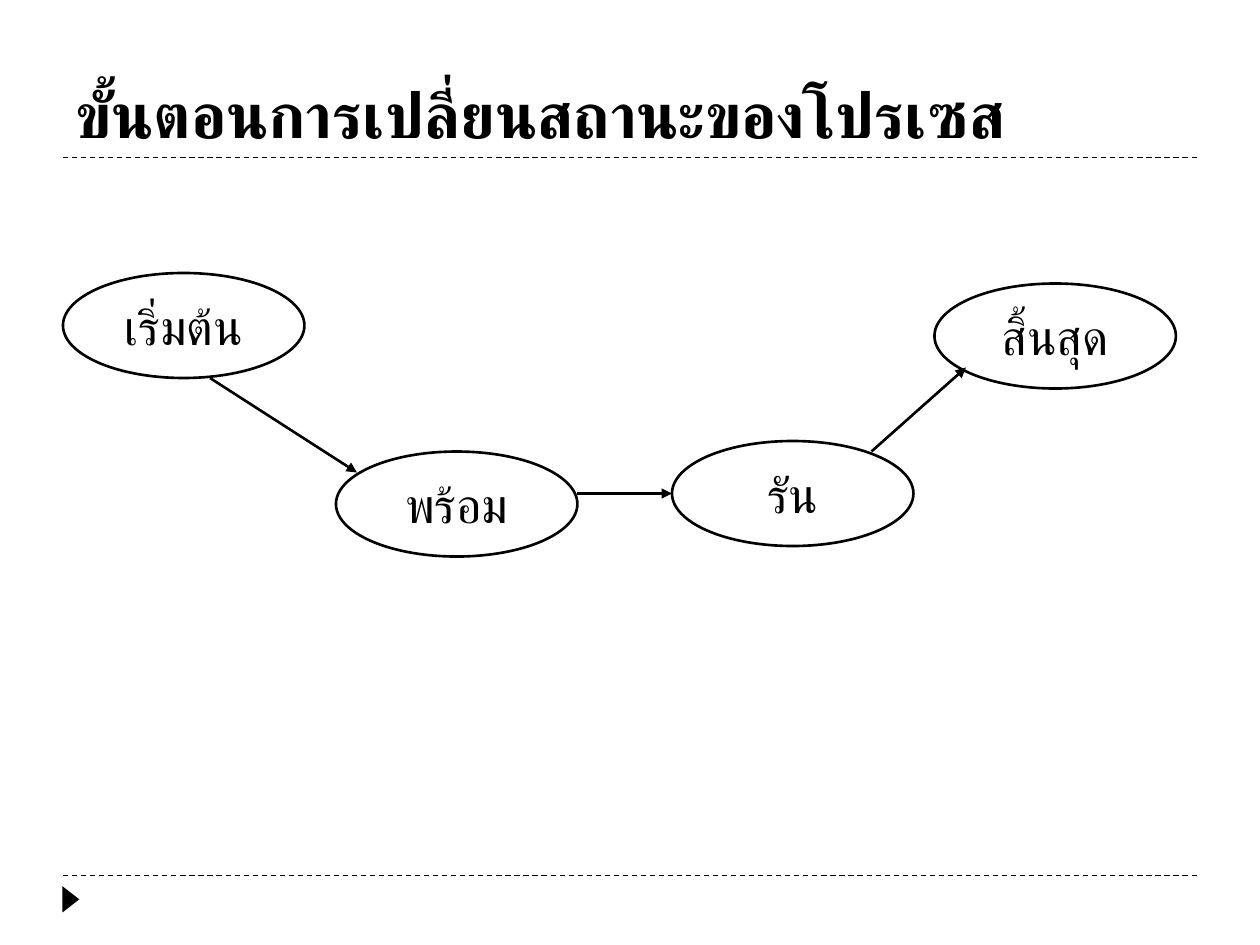
from lxml import etree
from pptx import Presentation
from pptx import util as u
from pptx.dml.color import RGBColor
from pptx.enum import dml, shapes, text
from pptx.oxml.ns import qn

BLACK = RGBColor(0, 0, 0)
WHITE = RGBColor(255, 255, 255)
FONT = "Calibri"

presentation = Presentation()
presentation.slide_width, presentation.slide_height = u.Inches(10), u.Inches(7.5)
slide = presentation.slides.add_slide(presentation.slide_layouts[6])

# Grid of 120 columns by 90 rows
CELL = presentation.slide_width / 120


def write(shape, words, frame_format, alignment, font_format):
    frame = shape.text_frame
    for name, value in frame_format.items():
        setattr(frame, name, value)
    paragraph = frame.paragraphs[0]
    paragraph.alignment = alignment
    run = paragraph.add_run()
    run.text = words
    run.font.color.rgb = BLACK
    for name, value in font_format.items():
        setattr(run.font, name, value)
    # Thai letters take the complex-script font
    etree.SubElement(run.font._element, qn("a:cs"), typeface=FONT)


def connect(start, end, width, dash=None, arrow=False):
    points = [round(value * CELL) for value in start + end]
    connector = slide.shapes.add_connector(shapes.MSO_CONNECTOR.STRAIGHT, *points)
    connector.line.color.rgb = BLACK
    connector.line.width = u.Pt(width)
    if dash:
        connector.line.dash_style = dash
    if arrow:
        etree.SubElement(connector.line._get_or_add_ln(), qn("a:tailEnd"), type="triangle")
    etree.SubElement(connector._element.spPr, qn("a:effectLst"))


# Dashed rules above the footer and under the title
for row in (83.4, 15):
    connect((6, row), (114, row), 0.75, dash=dml.MSO_LINE.DASH)

# Footer marker
marker = slide.shapes.add_shape(
    shapes.MSO_SHAPE.ISOSCELES_TRIANGLE,
    *(round(value * CELL) for value in (5.5, 84.85, 2.5, 1.6)))
marker.rotation = 90
marker.shadow.inherit = False
marker.fill.solid()
marker.fill.fore_color.rgb = BLACK
marker.line.fill.background()

# Title
title = slide.shapes.add_textbox(*(round(value * CELL) for value in (6, 2, 108, 13)))
write(title, "ขั้นตอนการเปลี่ยนสถานะของโปรเซส",
      {"word_wrap": True, "vertical_anchor": text.MSO_ANCHOR.BOTTOM},
      text.PP_ALIGN.LEFT, {"name": FONT, "size": u.Pt(36), "bold": True})

# Process states: column, row, label
states = [(6, 26, "เริ่มต้น"), (64, 42, "รัน"), (32, 43, "พร้อม"), (89, 27, "สิ้นสุด")]
for column, row, label in states:
    state = slide.shapes.add_shape(
        shapes.MSO_SHAPE.OVAL, *(round(value * CELL) for value in (column, row, 23, 10)))
    state.shadow.inherit = False
    state.fill.solid()
    state.fill.fore_color.rgb = WHITE
    state.line.color.rgb = BLACK
    state.line.width = u.Pt(1.5)
    write(state, label,
          {"word_wrap": False, "vertical_anchor": text.MSO_ANCHOR.MIDDLE},
          text.PP_ALIGN.CENTER, {"name": FONT, "size": u.Pt(28)})

# Transitions between states
for start, end in [((20, 36), (34, 45)), ((55, 47), (64, 47)), ((83, 43), (92, 35))]:
    connect(start, end, 1.5, arrow=True)

presentation.save("out.pptx")
